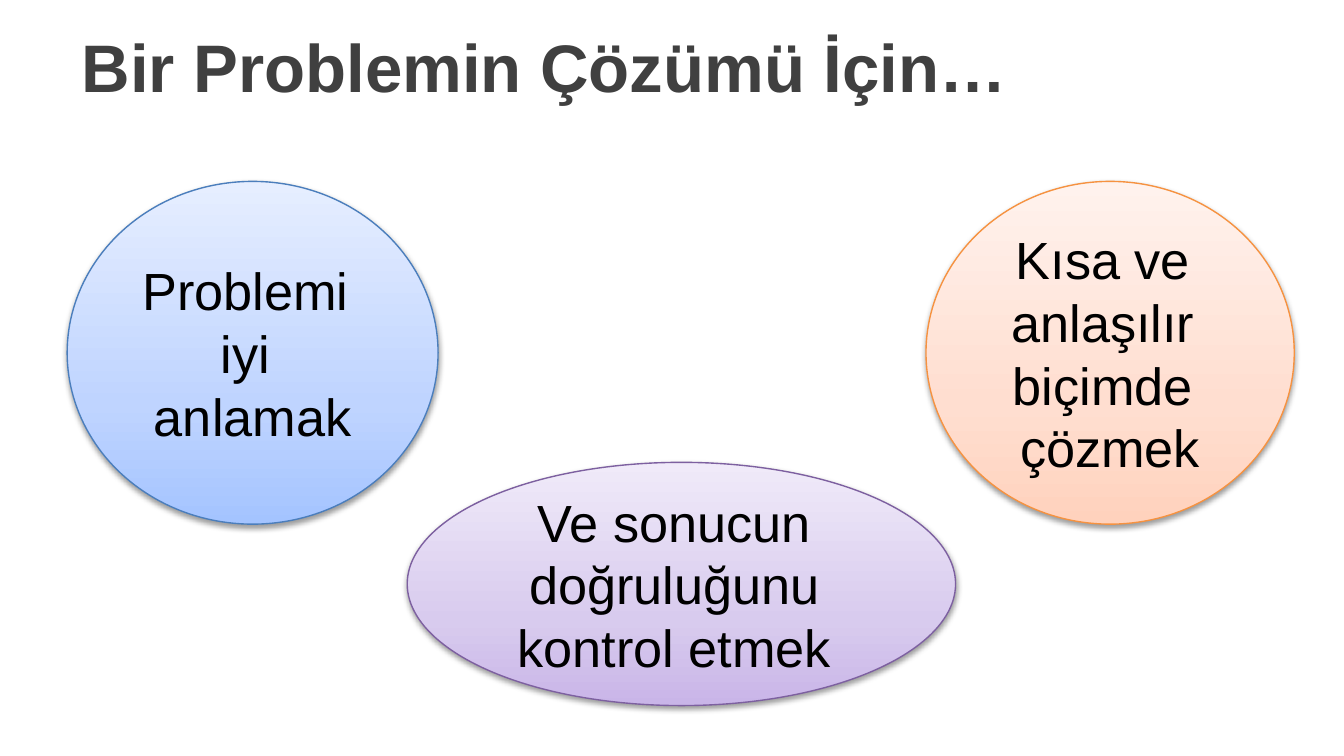
from lxml.etree import SubElement
from pptx import Presentation
from pptx.dml.color import RGBColor
from pptx.enum.shapes import MSO_SHAPE
from pptx.enum.text import MSO_ANCHOR, PP_ALIGN
from pptx.oxml.ns import qn
from pptx.util import Inches, Pt

CIRCLES = [
    ((0.5, 1.35, 2.76, 2.55), ("A4C4FF", "BFD4FF", "E6EEFF"), "4B7EBC",
     ["Problemi ", "iyi ", "anlamak"]),
    ((6.89, 1.35, 2.74, 2.55), ("FFD2BD", "FFDED0", "FFF2ED"), "F69240",
     ["Kısa ve ", "anlaşılır ", "biçimde ", "çözmek"]),
    ((3.03, 3.44, 4.08, 1.81), ("C9B5E8", "D8CBEE", "F0EAF9"), "7D60A0",
     ["Ve sonucun ", "doğruluğunu ", "kontrol etmek "]),
]


def color(value):
    """Turn a hex string into a colour."""
    return RGBColor.from_string(value)


def add_element(parent, tag, **attributes):
    """Append a drawing element and return it."""
    return SubElement(parent, qn(tag), {name: str(value) for name, value in attributes.items()})


def write_text(frame, lines, size=28, fill="000000", bold=False, align=PP_ALIGN.CENTER):
    """Write one paragraph per line with a common format."""
    frame.word_wrap = True
    frame.vertical_anchor = MSO_ANCHOR.MIDDLE
    for index, line in enumerate(lines):
        paragraph = frame.add_paragraph() if index else frame.paragraphs[0]
        paragraph.alignment = align
        run = paragraph.add_run()
        run.text = line
        run.font.name = "Arial"
        run.font.size = Pt(size)
        run.font.bold = bold
        run.font.color.rgb = color(fill)


def set_gradient(shape, colors):
    """Fill a shape with a three-stop gradient that rises from the bottom."""
    shape.fill.gradient()
    shape.fill.gradient_angle = 90
    stops = shape._element.spPr.find(qn("a:gradFill")).find(qn("a:gsLst"))
    stops.clear()
    for position, value in zip((0, 35, 100), colors):
        stop = add_element(stops, "a:gs", pos=position * 1000)
        add_element(stop, "a:srgbClr", val=value)


def set_shadow(shape):
    """Give a shape a soft shadow straight below it."""
    shape.shadow.inherit = False
    effects = shape._element.spPr.find(qn("a:effectLst"))
    shadow = add_element(effects, "a:outerShdw", blurRad=Pt(3.1), dist=Pt(1.6),
                         dir=90 * 60000, rotWithShape=0)
    shade = add_element(shadow, "a:srgbClr", val="000000")
    add_element(shade, "a:alpha", val=38000)


def add_title(slide, text):
    """Add the heading of the slide."""
    box = slide.shapes.add_textbox(Inches(0.51), Inches(0), Inches(9.49), Inches(0.97))
    write_text(box.text_frame, [text], size=36, fill="404040", bold=True, align=PP_ALIGN.LEFT)


def add_circle(slide, bounds, colors, outline, lines):
    """Add a shaded ellipse with centred lines of text."""
    shape = slide.shapes.add_shape(MSO_SHAPE.OVAL, *map(Inches, bounds))
    set_gradient(shape, colors)
    shape.line.color.rgb = color(outline)
    shape.line.width = Pt(0.75)
    set_shadow(shape)
    write_text(shape.text_frame, lines)


def main():
    """Build and save the presentation."""
    presentation = Presentation()
    presentation.slide_width = Inches(10)
    presentation.slide_height = Inches(10 * 9 / 16)
    slide = presentation.slides.add_slide(presentation.slide_layouts[6])
    add_title(slide, "Bir Problemin Çözümü İçin…")
    for circle in CIRCLES:
        add_circle(slide, *circle)
    presentation.save("out.pptx")


if __name__ == "__main__":
    main()
